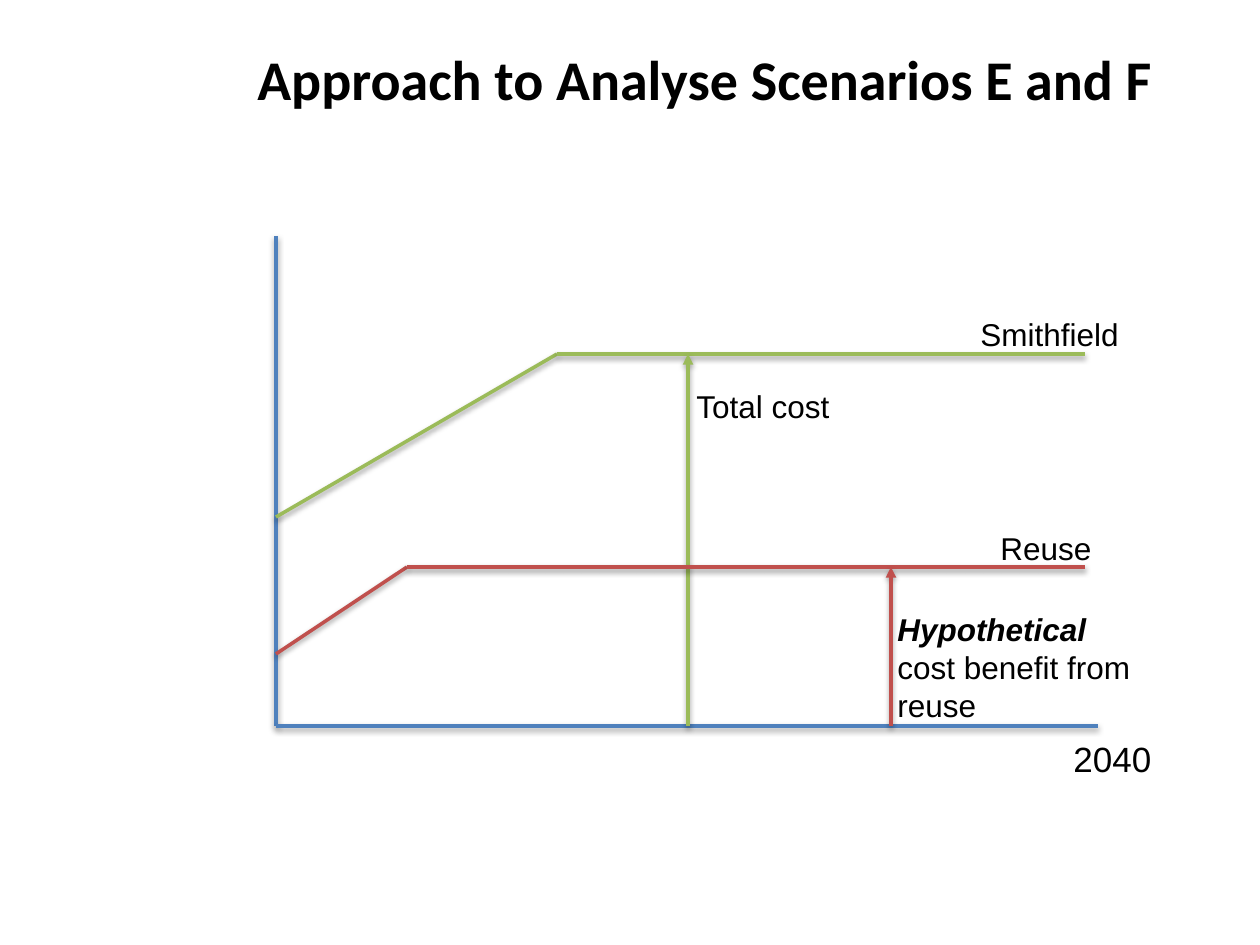
from lxml.etree import SubElement
from pptx import Presentation
from pptx.dml.color import RGBColor
from pptx.enum.shapes import MSO_CONNECTOR as Connector
from pptx.enum.text import MSO_ANCHOR as Anchor, PP_ALIGN as Align
from pptx.oxml.ns import qn
from pptx.util import Emu, Pt

COLORS = {"axis": "4F81BD", "smithfield": "9BBB59", "reuse": "C0504D", "text": "000000"}
EMU_PER_PX = 914400 / 126


def px(length):
    return Emu(round(length * EMU_PER_PX))


class CostSlide:
    font = "Arial"
    line_width = 2

    def __init__(self, deck):
        self.slide = deck.slides.add_slide(deck.slide_layouts[6])

    def label(self, text, left, top, width, height, size=18, font=None,
              bold=None, align=Align.LEFT, lead=None):
        box = self.slide.shapes.add_textbox(px(left), px(top), px(width), px(height))
        frame = box.text_frame
        frame.word_wrap = True
        frame.vertical_anchor = Anchor.TOP
        paragraph = frame.paragraphs[0]
        paragraph.alignment = align
        if lead:
            emphasis = paragraph.add_run()
            emphasis.text = lead
            emphasis.font.bold = emphasis.font.italic = True
        paragraph.add_run().text = text
        style = paragraph.font
        style.name = font or self.font
        style.size = Pt(size)
        style.bold = bold
        style.color.rgb = RGBColor.from_string(COLORS["text"])
        for run in paragraph.runs:
            run.font.size = Pt(size)

    def line(self, color, start, end, arrow=False):
        stroke = self.slide.shapes.add_connector(
            Connector.STRAIGHT, *map(px, (*start, *end)))
        stroke.line.width = Pt(self.line_width)
        stroke.line.color.rgb = RGBColor.from_string(COLORS[color])
        properties = stroke._element.spPr
        if arrow:
            SubElement(properties.find(qn("a:ln")), qn("a:tailEnd"), type="triangle")
        effects = SubElement(properties, qn("a:effectLst"))
        shadow = SubElement(effects, qn("a:outerShdw"), blurRad="40000",
                            dist="20000", dir="5400000", rotWithShape="0")
        tint = SubElement(shadow, qn("a:srgbClr"), val="000000")
        SubElement(tint, qn("a:alpha"), val="38000")

    def path_line(self, color, points):
        for start, end in zip(points, points[1:]):
            self.line(color, start, end)


def main():
    deck = Presentation()
    deck.slide_width, deck.slide_height = px(1260), px(945)
    chart = CostSlide(deck)

    axis_x, base_y, line_end = 276, 726, 1085
    smithfield_y, reuse_y = 354, 567
    label_width, label_height = 272, 50

    chart.label("Approach to Analyse Scenarios E and F", 213, 38, 984, 158,
                size=32, font="Calibri", bold=True, align=Align.CENTER)
    chart.path_line("axis", [(axis_x, 236), (axis_x, base_y), (1098, base_y)])

    chart.path_line("smithfield", [(axis_x, 517), (557, smithfield_y), (line_end, smithfield_y)])
    chart.line("smithfield", (688, base_y), (688, smithfield_y), arrow=True)
    chart.label("Smithfield", 968, 309, label_width, label_height)
    chart.label("Total cost", 684, 381, label_width, label_height)

    chart.path_line("reuse", [(axis_x, 654), (407, reuse_y), (line_end, reuse_y)])
    chart.line("reuse", (891, base_y), (891, reuse_y), arrow=True)
    chart.label(" cost benefit from reuse", 885, 604, label_width, 127, lead="Hypothetical")
    chart.label("Reuse", 988, 523, label_width, label_height)
    chart.label("2040", 1061, 731, label_width, 55, size=20)

    deck.save("out.pptx")


if __name__ == "__main__":
    main()
